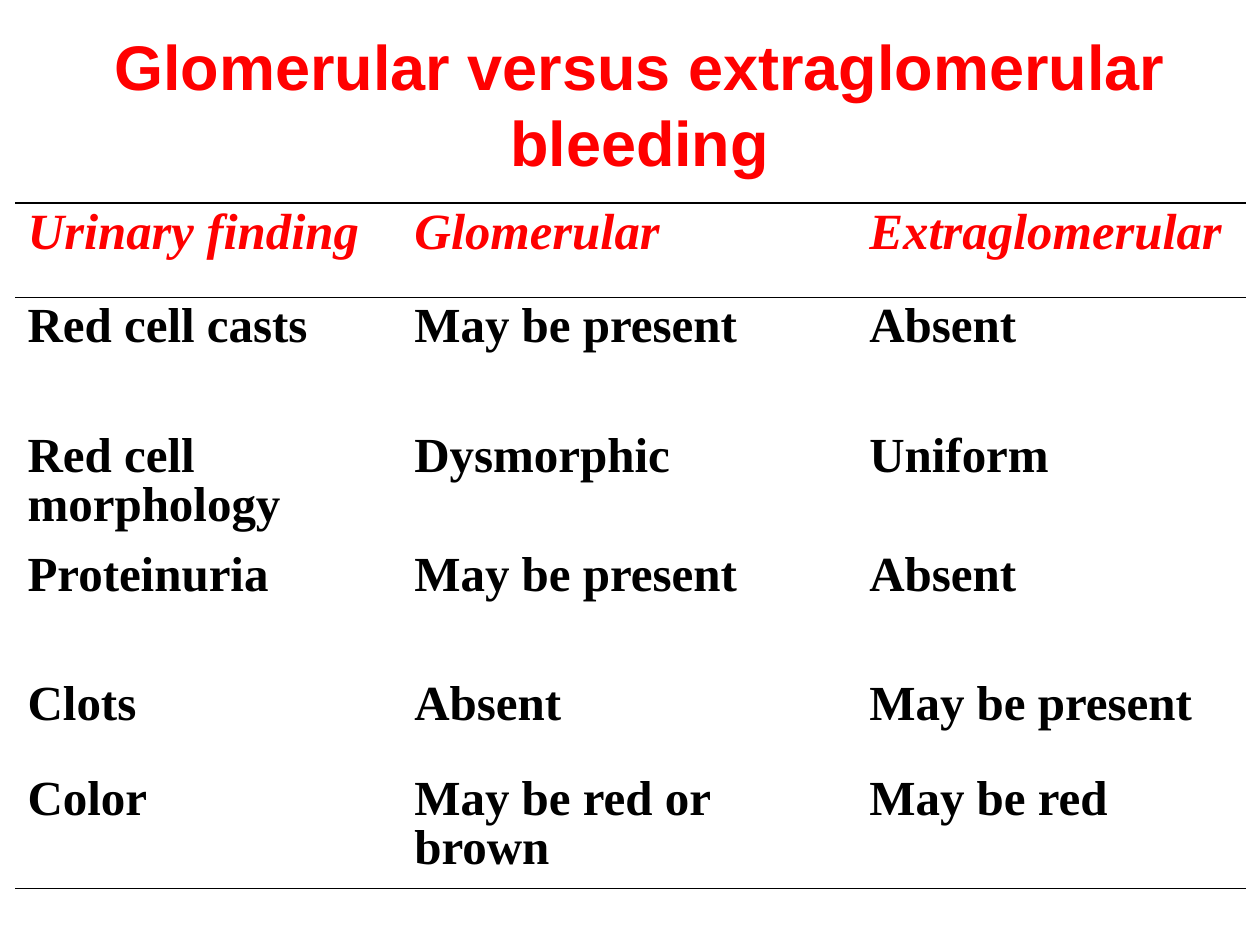
from dataclasses import dataclass

from lxml import etree
from pptx import Presentation
from pptx.dml.color import RGBColor
from pptx.enum import text as t
from pptx.oxml import ns
from pptx.util import Pt


@dataclass(frozen=True)
class Theme:
    accent: str = "FF0000"
    ink: str = "000000"
    title_font: str = "Arial"
    table_font: str = "Times New Roman"
    title_size: float = 36
    header_size: float = 29
    body_size: float = 28
    rule_width: float = 1


THEME = Theme()
TITLE = "Glomerular versus extraglomerular bleeding"
FINDINGS = [
    ("Urinary finding", "Glomerular", "Extraglomerular"),
    ("Red cell casts", "May be present", "Absent"),
    ("Red cell morphology", "Dysmorphic", "Uniform"),
    ("Proteinuria", "May be present", "Absent"),
    ("Clots", "Absent", "May be present"),
    ("Color", "May be red or brown", "May be red"),
]
COLUMN_WIDTHS = (221, 260, 222.5)
ROW_HEIGHTS = (54, 74.2, 67.7, 74.2, 54, 67.7)


def add_run(paragraph, words, font, size, color, italic=False):
    run = paragraph.add_run()
    run.text = words
    run.font.name = font
    run.font.size = Pt(size)
    run.font.bold = True
    run.font.italic = italic
    run.font.color.rgb = RGBColor.from_string(color)


def add_title(slide):
    title = slide.shapes.title
    title.left, title.top, title.width, title.height = map(Pt, (31, 18, 669, 82))
    frame = title.text_frame
    frame.word_wrap = True
    frame.auto_size = t.MSO_AUTO_SIZE.NONE
    frame.vertical_anchor = t.MSO_ANCHOR.MIDDLE
    heading = frame.paragraphs[0]
    heading.alignment = t.PP_ALIGN.CENTER
    add_run(heading, TITLE, THEME.title_font, THEME.title_size, THEME.accent)


def set_rules(cell, ruled_edges):
    properties = cell._tc.get_or_add_tcPr()
    for edge in "LRTB":
        rule = etree.SubElement(properties, ns.qn(f"a:ln{edge}"))
        if edge in ruled_edges:
            rule.set("w", str(Pt(THEME.rule_width)))
            fill = etree.SubElement(rule, ns.qn("a:solidFill"))
            etree.SubElement(fill, ns.qn("a:srgbClr"), val=THEME.ink)
        else:
            etree.SubElement(rule, ns.qn("a:noFill"))


def fill_cell(cell, words, is_header):
    cell.fill.background()
    cell.margin_left = cell.margin_right = Pt(7.2)
    cell.margin_top = cell.margin_bottom = Pt(3.6)
    finding = cell.text_frame.paragraphs[0]
    finding.line_spacing = 0.9
    size = THEME.header_size if is_header else THEME.body_size
    color = THEME.accent if is_header else THEME.ink
    add_run(finding, words, THEME.table_font, size, color, italic=is_header)


def add_findings_table(slide):
    frame = slide.shapes.add_table(
        len(FINDINGS), len(COLUMN_WIDTHS), Pt(8.6), Pt(116),
        Pt(sum(COLUMN_WIDTHS)), Pt(sum(ROW_HEIGHTS)))
    findings = frame.table
    findings.first_row = findings.horz_banding = False
    for column, width in zip(findings.columns, COLUMN_WIDTHS):
        column.width = Pt(width)
    for row, height in zip(findings.rows, ROW_HEIGHTS):
        row.height = Pt(height)
    ruled_edges = {0: "TB", 1: "T", len(FINDINGS) - 1: "B"}
    for r, entries in enumerate(FINDINGS):
        for c, words in enumerate(entries):
            cell = findings.cell(r, c)
            set_rules(cell, ruled_edges.get(r, ""))
            fill_cell(cell, words, is_header=r == 0)


def main():
    deck = Presentation()
    deck.slide_width, deck.slide_height = Pt(720), Pt(540)
    slide = deck.slides.add_slide(deck.slide_layouts[5])
    add_title(slide)
    add_findings_table(slide)
    deck.save("out.pptx")


if __name__ == "__main__":
    main()
